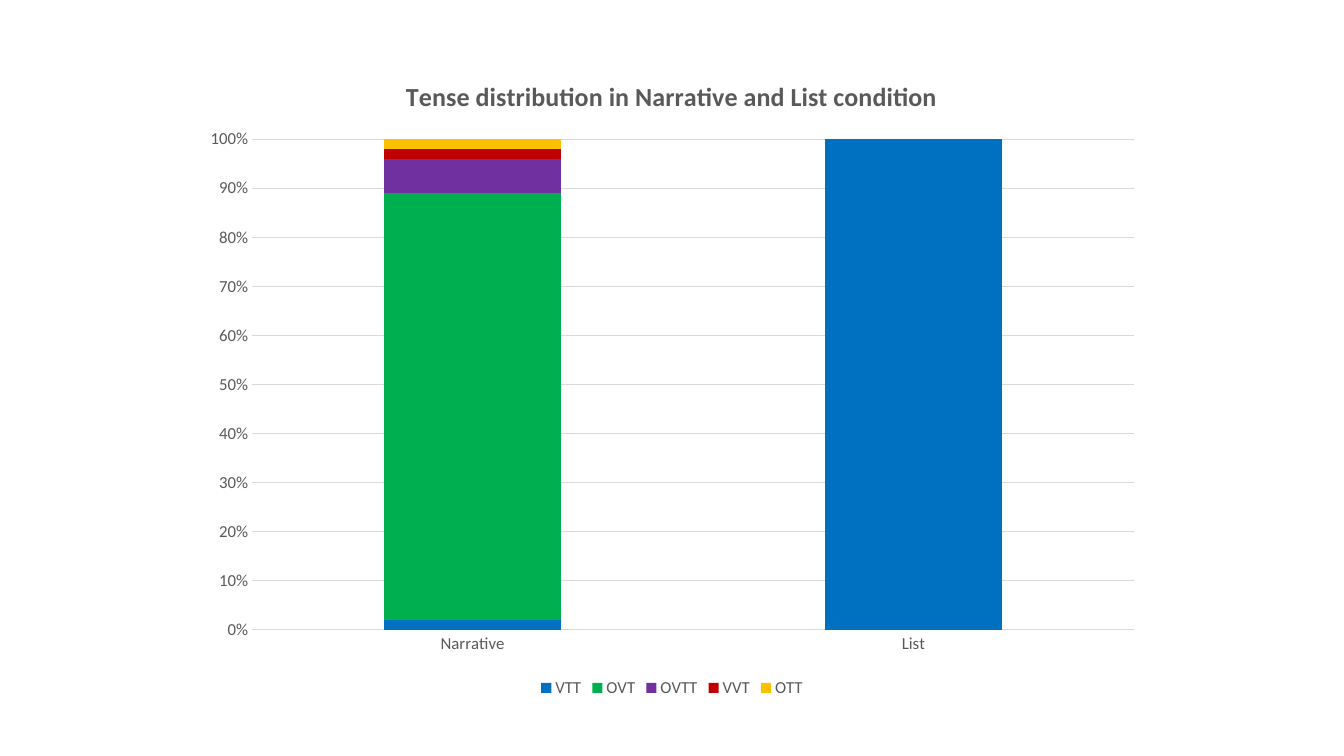
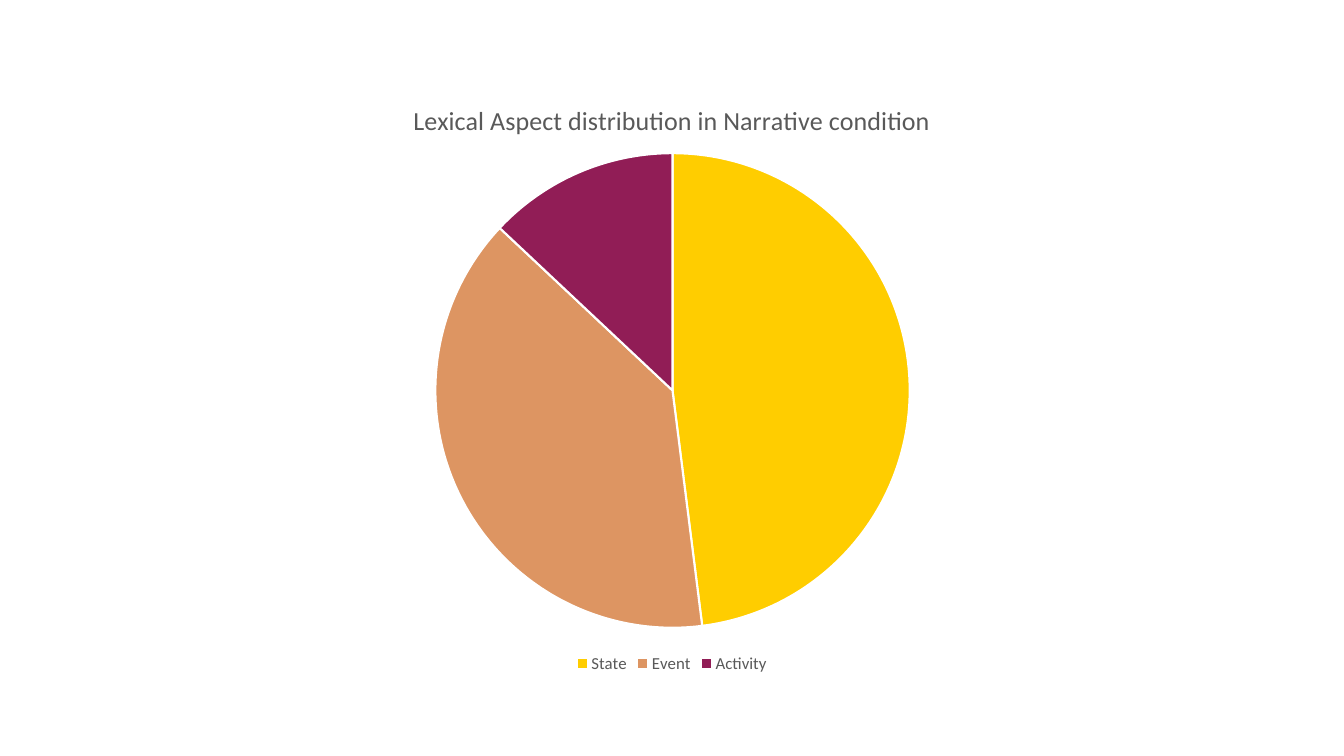
"""Build two chart slides on tense and lexical aspect distribution."""
import pptx
import pptx.chart.data
import pptx.dml.color
import pptx.enum.chart
import pptx.oxml
import pptx.oxml.ns
import pptx.util

PX = 9080
SLIDE_SIZE = (1343, 755)
FONT = "Calibri"
TITLE_SIZE = 18.6
LABEL_SIZE = 12
COLORS = {
    "text": "595959", "grid": "D9D9D9", "white": "FFFFFF",
    "VTT": "0070C0", "OVT": "00B050", "OVTT": "7030A0", "VVT": "C00000", "OTT": "FFC000",
    "State": "FFCD00", "Event": "DD9562", "Activity": "911D56",
}

TENSE = {
    "title": "Tense distribution in Narrative and List condition",
    "bold": True,
    "type": pptx.enum.chart.XL_CHART_TYPE.COLUMN_STACKED_100,
    "frame": (191, 55, 961, 646),
    "plot": (252, 139, 881, 490),
    "categories": ["Narrative", "List"],
    "series": {"VTT": (2, 100), "OVT": (87, 0), "OVTT": (7, 0), "VVT": (2, 0), "OTT": (2, 0)},
}
ASPECT = {
    "title": "Lexical Aspect distribution in Narrative condition",
    "bold": False,
    "type": pptx.enum.chart.XL_CHART_TYPE.PIE,
    "frame": (224, 80, 895, 597),
    "plot": (435, 153, 474, 474),
    "categories": ["State", "Event", "Activity"],
    "series": {"Series 1": (48, 39, 13)},
}


def rgb(name):
    return pptx.dml.color.RGBColor.from_string(COLORS[name])


def style_font(font, size, bold=False):
    font.name = FONT
    font.size = pptx.util.Pt(size)
    font.bold = bold
    font.color.rgb = rgb("text")


def fill_shape(part, name):
    part.format.fill.solid()
    part.format.fill.fore_color.rgb = rgb(name)


def style_line(line, name, width):
    line.color.rgb = rgb(name)
    line.width = pptx.util.Pt(width)


def place_plot(chart, frame, plot):
    left, top, width, height = frame
    fractions = {
        "x": (plot[0] - left) / width, "y": (plot[1] - top) / height,
        "w": plot[2] / width, "h": plot[3] / height,
    }
    modes = '<c:layoutTarget val="inner"/><c:xMode val="edge"/><c:yMode val="edge"/>'
    values = "".join(f'<c:{key} val="{value:.4f}"/>' for key, value in fractions.items())
    layout = pptx.oxml.parse_xml(
        f'<c:layout {pptx.oxml.ns.nsdecls("c")}><c:manualLayout>{modes}{values}</c:manualLayout></c:layout>')
    plot_area = chart._chartSpace.chart.plotArea
    for old_layout in plot_area.findall(pptx.oxml.ns.qn("c:layout")):
        plot_area.remove(old_layout)
    plot_area.insert(0, layout)


def add_chart_slide(presentation, content):
    slide = presentation.slides.add_slide(presentation.slide_layouts[6])
    data = pptx.chart.data.CategoryChartData()
    data.categories = content["categories"]
    for name, values in content["series"].items():
        data.add_series(name, values)
    frame = [length * PX for length in content["frame"]]
    chart = slide.shapes.add_chart(content["type"], *frame, data).chart
    style_font(chart.font, LABEL_SIZE)
    chart.has_title = True
    chart.chart_title.include_in_layout = False
    paragraph = chart.chart_title.text_frame.paragraphs[0]
    paragraph.text = content["title"]
    style_font(paragraph.font, TITLE_SIZE, content["bold"])
    chart.has_legend = True
    chart.legend.position = pptx.enum.chart.XL_LEGEND_POSITION.BOTTOM
    chart.legend.include_in_layout = False
    style_font(chart.legend.font, LABEL_SIZE)
    place_plot(chart, content["frame"], content["plot"])
    return chart


def style_columns(chart):
    plot = chart.plots[0]
    plot.vary_by_categories = False
    plot.gap_width = 150
    plot.overlap = 100
    for series in plot.series:
        fill_shape(series, series.name)
    for axis in (chart.category_axis, chart.value_axis):
        axis.major_tick_mark = pptx.enum.chart.XL_TICK_MARK.NONE
        axis.minor_tick_mark = pptx.enum.chart.XL_TICK_MARK.NONE
        style_font(axis.tick_labels.font, LABEL_SIZE)
    style_line(chart.category_axis.format.line, "grid", 0.75)
    value_axis = chart.value_axis
    value_axis.format.line.fill.background()
    value_axis.has_major_gridlines = True
    style_line(value_axis.major_gridlines.format.line, "grid", 0.75)
    value_axis.maximum_scale = 1
    value_axis.major_unit = 0.1
    value_axis.tick_labels.number_format = "0%"
    value_axis.tick_labels.number_format_is_linked = False


def style_pie(chart):
    plot = chart.plots[0]
    plot.vary_by_categories = True
    for index, name in enumerate(plot.categories):
        point = plot.series[0].points[index]
        fill_shape(point, name)
        style_line(point.format.line, "white", 1.5)


def main():
    presentation = pptx.Presentation()
    presentation.slide_width, presentation.slide_height = (length * PX for length in SLIDE_SIZE)
    style_columns(add_chart_slide(presentation, TENSE))
    style_pie(add_chart_slide(presentation, ASPECT))
    presentation.save("out.pptx")


if __name__ == "__main__":
    main()
